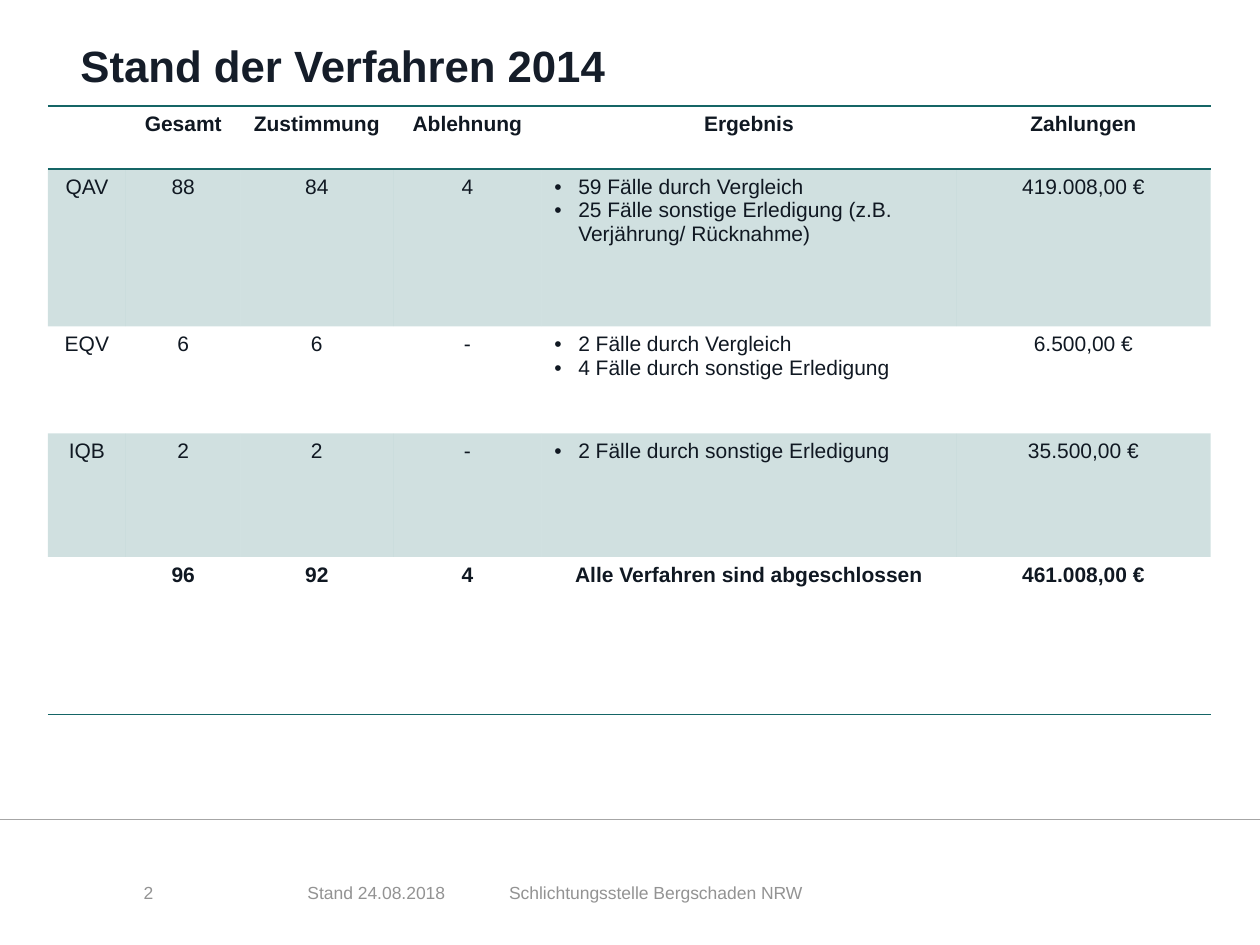
import pptx
import pptx.util
import pptx.dml.color
import pptx.enum.text
import pptx.oxml
import pptx.oxml.ns
from lxml import etree

RGBColor = pptx.dml.color.RGBColor
Inches = pptx.util.Inches
Pt = pptx.util.Pt
qn = pptx.oxml.ns.qn
ALIGN = pptx.enum.text.PP_ALIGN

TEAL = RGBColor(0x15, 0x65, 0x66)
NAVY = RGBColor(0x15, 0x1D, 0x29)
INK = RGBColor(0x10, 0x18, 0x22)
GREY = RGBColor(0x93, 0x93, 0x93)
RULE = RGBColor(0xA6, 0xA6, 0xA6)

TITLE = {"name": "Arial", "size": Pt(25), "bold": True}
FOOTER = {"name": "Arial", "size": Pt(10), "bold": False}
BODY = {"name": "Arial", "size": Pt(12), "bold": False}
STRONG = {**BODY, "bold": True}


def write(p, text, fmt, color):
    r = p.add_run()
    r.text = text
    for key, value in fmt.items():
        setattr(r.font, key, value)
    r.font.color.rgb = color


def add_text(box, text, fmt, color, margins):
    sp = s.shapes.add_textbox(*[Inches(v) for v in box])
    tf = sp.text_frame
    tf.word_wrap = True
    tf.margin_left = tf.margin_right = Inches(margins[0])
    tf.margin_top = tf.margin_bottom = Inches(margins[1])
    write(tf.paragraphs[0], text, fmt, color)


prs = pptx.Presentation()
prs.slide_width, prs.slide_height = Inches(10), Inches(7.5)
s = prs.slides.add_slide(prs.slide_layouts[6])

rule_y = Inches(6.5)
line = s.shapes.add_connector(1, 0, rule_y, prs.slide_width, rule_y)
line.line.color.rgb = RULE
line.line.width = Pt(0.5)
etree.SubElement(line._element.spPr, qn("a:effectLst"))

add_text((0.54, 0.26, 8.79, 0.52), "Stand der Verfahren 2014", TITLE, NAVY, (0.1, 0.05))
for left, width, text in [
    (1.14, 1.3, "2"),
    (2.44, 1.17, "Stand 24.08.2018"),
    (4.04, 3.88, "Schlichtungsstelle Bergschaden NRW"),
]:
    add_text((left, 7, width, 0.21), text, FOOTER, GREY, (0, 0))

cols = [0.62, 0.91, 1.21, 1.18, 3.29, 2.02]
rows = [0.5, 1.25, 0.85, 0.98, 1.25]
data = [
    ["", "Gesamt", "Zustimmung", "Ablehnung", "Ergebnis", "Zahlungen"],
    ["QAV", "88", "84", "4",
     ["59 Fälle durch Vergleich",
      "25 Fälle sonstige Erledigung (z.B. Verjährung/ Rücknahme)"], "419.008,00 €"],
    ["EQV", "6", "6", "-",
     ["2 Fälle durch Vergleich", "4 Fälle durch sonstige Erledigung"], "6.500,00 €"],
    ["IQB", "2", "2", "-", ["2 Fälle durch sonstige Erledigung"], "35.500,00 €"],
    ["", "96", "92", "4", "Alle Verfahren sind abgeschlossen", "461.008,00 €"],
]
borders = {0: ["a:lnT", "a:lnB"], len(rows) - 1: ["a:lnB"]}

frame = s.shapes.add_table(len(rows), len(cols), Inches(0.38), Inches(0.84),
                           Inches(sum(cols)), Inches(sum(rows)))
table = frame.table
table.first_row = table.horz_banding = False
table._tbl.tblPr.find(qn("a:tableStyleId")).text = "{2D5ABB26-0587-4C30-8999-92F81FD0307C}"
for column, width in zip(table.columns, cols):
    column.width = Inches(width)

for i, (height, values) in enumerate(zip(rows, data)):
    table.rows[i].height = Inches(height)
    for j, value in enumerate(values):
        cell = table.cell(i, j)
        tcPr = cell._tc.get_or_add_tcPr()
        for tag in borders.get(i, []):
            ln = etree.SubElement(tcPr, qn(tag), w=str(Pt(1)))
            fill = etree.SubElement(ln, qn("a:solidFill"))
            etree.SubElement(fill, qn("a:srgbClr"), val=str(TEAL))
        if i % 2:
            cell.fill.solid()
            cell.fill.fore_color.rgb = TEAL
            etree.SubElement(tcPr.find(".//" + qn("a:srgbClr")), qn("a:alpha"), val="20000")
        else:
            cell.fill.background()
        bulleted = isinstance(value, list)
        tf = cell.text_frame
        for n, text in enumerate(value if bulleted else [value]):
            p = tf.add_paragraph() if n else tf.paragraphs[0]
            if bulleted:
                pPr = p._p.get_or_add_pPr()
                pPr.set("marL", str(Inches(0.19)))
                pPr.set("indent", str(-Inches(0.19)))
                etree.SubElement(pPr, qn("a:buFont"), typeface="Arial")
                etree.SubElement(pPr, qn("a:buChar"), char="•")
            else:
                p.alignment = ALIGN.CENTER
            if text:
                write(p, text, STRONG if i in borders else BODY, INK)

prs.save("out.pptx")
